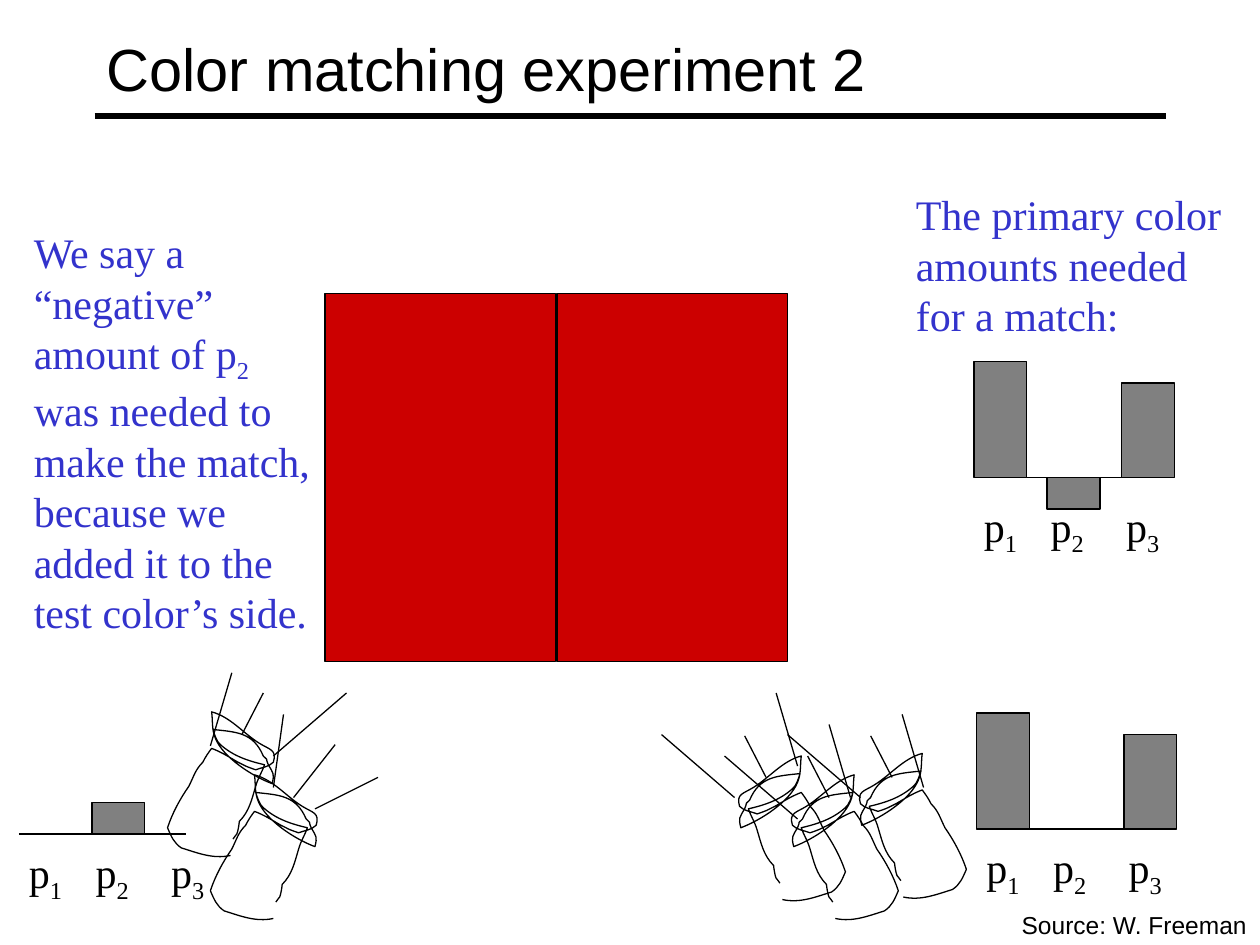
"""Build the "Color matching experiment 2" slide."""
from typing import NamedTuple

from lxml.etree import SubElement
from pptx import Presentation
from pptx.dml.color import RGBColor
from pptx.enum.shapes import MSO_CONNECTOR, MSO_SHAPE
from pptx.enum.text import MSO_ANCHOR
from pptx.oxml.ns import qn
from pptx.util import Inches, Pt

BLACK, RED, GREY, BLUE = "000000", "CC0000", "808080", "3333CC"
SERIF, SANS = "Times New Roman", "Arial"
BAR_WIDTH, AXIS_LENGTH = 0.42, 1.33
BAR_OFFSETS = (0, 0.58, 1.17)
LABEL_TABS = (0.53, 1.13)
LAMP_WIDTH = 0.87
LAMP_START = (0.5, 1.14)
LAMP_CURVES = (
    ((0.36, 1.17), (0.24, 1.12), (0.11, 1.08)),
    ((0.05, 1.04), (0.03, 0.99), (0, 0.92)),
    ((0.04, 0.8), (0.1, 0.69), (0.17, 0.59)),
    ((0.21, 0.51), (0.22, 0.46), (0.28, 0.4)),
    ((0.3, 0.36), (0.32, 0.33), (0.35, 0.29)),
    ((0.43, 0.32), (0.49, 0.36), (0.56, 0.4)),
    ((0.58, 0.41), (0.6, 0.42), (0.62, 0.43)),
    ((0.64, 0.44), (0.7, 0.46), (0.7, 0.46)),
    ((0.75, 0.44), (0.8, 0.44), (0.84, 0.4)),
    ((0.87, 0.3), (0.81, 0.3), (0.73, 0.25)),
    ((0.6, 0.17), (0.5, 0.04), (0.35, 0)),
    ((0.36, 0.07), (0.35, 0.14), (0.38, 0.21)),
    ((0.44, 0.36), (0.67, 0.51), (0.83, 0.57)),
    ((0.85, 0.49), (0.84, 0.49), (0.8, 0.42)),
    ((0.77, 0.35), (0.81, 0.4), (0.76, 0.35)),
    ((0.68, 0.16), (0.54, 0.16), (0.36, 0.14)),
    ((0.37, 0.17), (0.39, 0.24), (0.42, 0.26)),
    ((0.52, 0.35), (0.64, 0.39), (0.77, 0.42)),
    ((0.75, 0.48), (0.72, 0.52), (0.7, 0.59)),
    ((0.67, 0.69), (0.65, 0.79), (0.57, 0.87)),
    ((0.57, 0.88), (0.56, 0.95), (0.55, 0.97)),
    ((0.54, 0.98), (0.52, 1.01), (0.52, 1.01)),
)


class Lamp(NamedTuple):
    left: float
    top: float
    mirrored: bool


class Beams(NamedTuple):
    dx: float
    dy: float
    starts: tuple


class Amounts(NamedTuple):
    left: float
    axis: float
    label_top: float
    heights: tuple


class Run(NamedTuple):
    text: str
    subscript: bool = False


LAMPS = (
    Lamp(6.8, 5.98, True),
    Lamp(6.26, 6.15, True),
    Lamp(5.84, 6, True),
    Lamp(1.67, 6.15, False),
    Lamp(1.33, 5.65, False),
)
BEAMS = (
    Beams(-0.58, -0.5, ((5.83, 6.33), (6.33, 6.5), (6.83, 6.33))),
    Beams(-0.17, -0.58, ((6.33, 6.08), (6.75, 6.33), (7.33, 6.25))),
    Beams(-0.17, -0.33, ((6.08, 6.17), (6.58, 6.33), (7.08, 6.17))),
    Beams(0.08, -0.58, ((2.17, 6.25),)),
    Beams(0.5, -0.25, ((2.5, 6.42),)),
    Beams(0.33, -0.42, ((2.33, 6.33),)),
    Beams(0.58, -0.5, ((2.17, 6),)),
    Beams(0.17, -0.58, ((1.67, 5.92),)),
    Beams(0.17, -0.33, ((1.92, 5.83),)),
)
AMOUNTS = (
    Amounts(7.75, 6.58, 6.63, (0.92, 0, 0.75)),
    Amounts(0.15, 6.62, 6.67, (0, 0.25, 0)),
    Amounts(7.73, 3.79, 3.92, (0.92, -0.25, 0.75)),
)
LABELS = (Run("p"), Run("1", True), Run("\tp"), Run("2", True), Run("\tp"), Run("3", True))
NOTE = (
    Run("We say a “negative” amount of p"),
    Run("2", True),
    Run(" was needed to make the match, because we added it to the test color’s side."),
)


def color(value: str) -> RGBColor:
    return RGBColor.from_string(value)


def outline(shape, width: float = 0.75) -> None:
    shape.line.color.rgb = color(BLACK)
    shape.line.width = Pt(width)


def draw_line(slide, x1: float, y1: float, x2: float, y2: float, width: float = 0.75) -> None:
    line = slide.shapes.add_connector(
        MSO_CONNECTOR.STRAIGHT, Inches(x1), Inches(y1), Inches(x2), Inches(y2))
    outline(line, width)
    SubElement(line._element.spPr, qn("a:effectLst"))


def draw_rect(slide, left: float, top: float, width: float, height: float, fill: str) -> None:
    rect = slide.shapes.add_shape(
        MSO_SHAPE.RECTANGLE, Inches(left), Inches(top), Inches(width), Inches(height))
    rect.shadow.inherit = False
    rect.fill.solid()
    rect.fill.fore_color.rgb = color(fill)
    outline(rect)


def draw_text(slide, box: tuple, runs: tuple, size: float, font: str, ink: str,
              tabs: tuple = (), wrap: bool = True, anchor=MSO_ANCHOR.TOP) -> None:
    frame = slide.shapes.add_textbox(*map(Inches, box)).text_frame
    frame.word_wrap = wrap
    frame.vertical_anchor = anchor
    paragraph = frame.paragraphs[0]
    if tabs:
        stops = SubElement(paragraph._p.get_or_add_pPr(), qn("a:tabLst"))
        for tab in tabs:
            SubElement(stops, qn("a:tab"), pos=str(Inches(tab)), algn="l")
    for part in runs:
        run = paragraph.add_run()
        run.text = part.text
        run.font.size = Pt(size)
        run.font.name = font
        run.font.color.rgb = color(ink)
        if part.subscript:
            run.font._element.set("baseline", "-25000")


def draw_lamp(slide, lamp: Lamp) -> None:
    def place(point: tuple) -> tuple:
        x, y = point
        across = LAMP_WIDTH - x if lamp.mirrored else x
        return Inches(lamp.left + across), Inches(lamp.top + y)

    builder = slide.shapes.build_freeform(*place(LAMP_START))
    builder.add_line_segments([place(p) for curve in LAMP_CURVES for p in curve], close=False)
    shape = builder.convert_to_shape()
    shape.shadow.inherit = False
    shape.fill.background()
    outline(shape)
    segments = list(shape._element.iter(qn("a:lnTo")))
    outline_path = segments[0].getparent()
    for first in range(0, len(segments), 3):
        curve = SubElement(outline_path, qn("a:cubicBezTo"))
        for segment in segments[first:first + 3]:
            curve.append(segment[0])
            outline_path.remove(segment)


def draw_amounts(slide, amounts: Amounts) -> None:
    left, axis, label_top, heights = amounts
    draw_line(slide, left, axis, left + AXIS_LENGTH, axis)
    for offset, height in zip(BAR_OFFSETS, heights):
        if height:
            draw_rect(slide, left + offset, axis - max(height, 0), BAR_WIDTH, abs(height), GREY)
    draw_text(slide, (left - 0.02, label_top, 1.78, 0.5), LABELS, 24, SERIF, BLACK, LABEL_TABS)


def main() -> None:
    deck = Presentation()
    deck.slide_width, deck.slide_height = Inches(10), Inches(7.5)
    slide = deck.slides.add_slide(deck.slide_layouts[6])
    draw_line(slide, 0.75, 0.92, 9.25, 0.92, 3)
    draw_text(slide, (0.75, 0.08, 8.5, 0.92), (Run("Color matching experiment 2"),),
              34, SANS, BLACK, anchor=MSO_ANCHOR.MIDDLE)
    for left in (2.58, 4.42):
        draw_rect(slide, left, 2.33, 1.83, 2.92, RED)
    for lamp in LAMPS:
        draw_lamp(slide, lamp)
    for dx, dy, starts in BEAMS:
        for x, y in starts:
            draw_line(slide, x, y, x + dx, y + dy)
    for amounts in AMOUNTS:
        draw_amounts(slide, amounts)
    draw_text(slide, (0.17, 1.75, 2.42, 3.3), NOTE, 24, SERIF, BLUE)
    draw_text(slide, (7.17, 1.45, 2.75, 1.3),
              (Run("The primary color amounts needed for a match:"),), 24, SERIF, BLUE)
    draw_text(slide, (8.01, 7.17, 1.99, 0.33), (Run("Source: W. Freeman"),),
              14, SANS, BLACK, wrap=False)
    deck.save("out.pptx")


if __name__ == "__main__":
    main()
